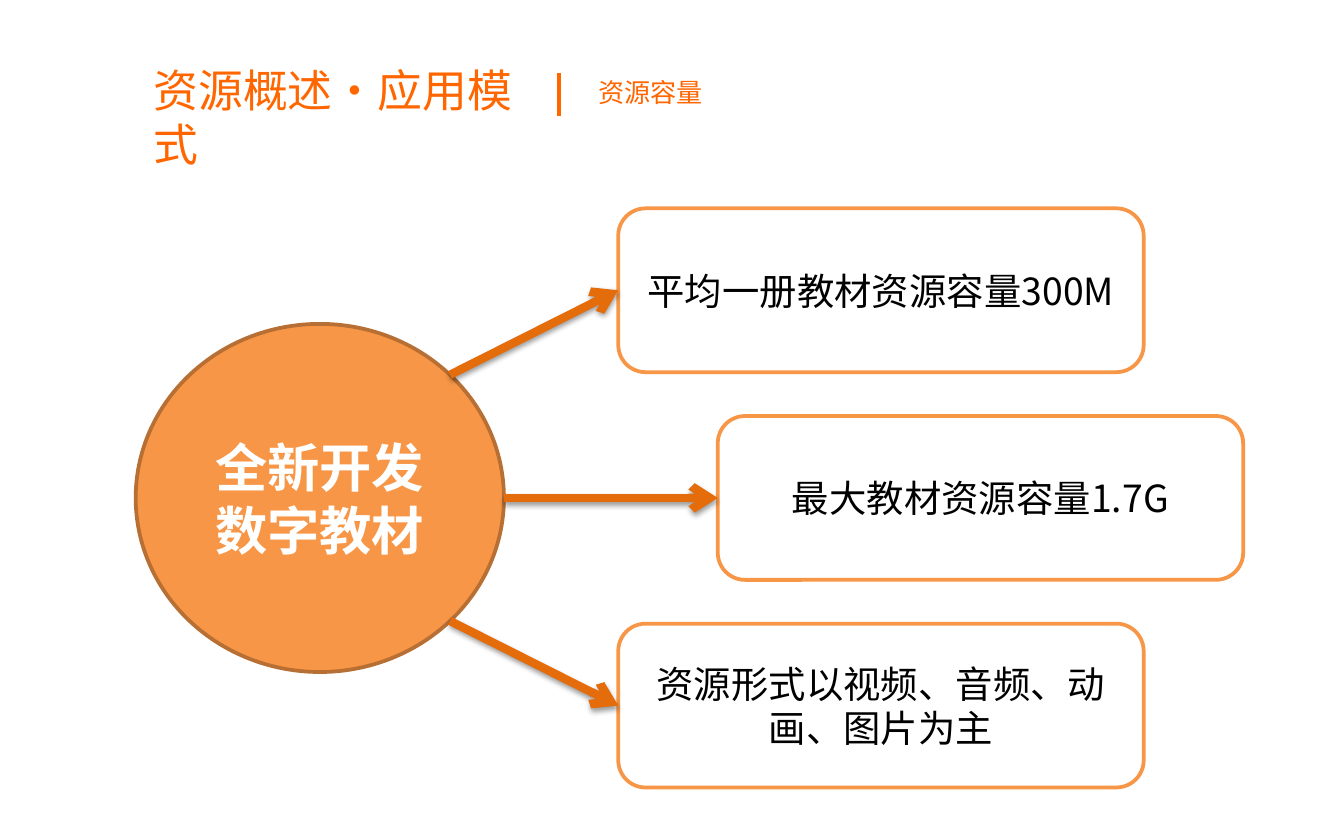
from dataclasses import dataclass
from math import cos, radians, sin

from lxml.etree import SubElement
from pptx import Presentation
from pptx.dml.color import RGBColor
from pptx.enum.shapes import MSO_CONNECTOR, MSO_SHAPE
from pptx.enum.text import MSO_ANCHOR, MSO_AUTO_SIZE, PP_ALIGN
from pptx.oxml import parse_xml
from pptx.oxml.ns import nsdecls, qn
from pptx.util import Pt

FONT = "Noto Sans CJK SC"
ACCENT, ORANGE, RIM, ARROW = "FF6600", "F79646", "B76F34", "E46C0A"
WHITE, BLACK = "FFFFFF", "000000"

# Circle and card geometry, in points
CENTER_X, CENTER_Y = 171.35, 266.75
RADIUS_X, RADIUS_Y = 98.65, 93.25
CARD_W, CARD_H, CARD_STEP = 281.5, 87.8, 111.25


@dataclass
class Card:
    text: str
    left: float
    row: int      # rows from the circle's centre line
    angle: float  # where its arrow leaves the circle, in degrees


CARDS = [
    Card("平均一册教材资源容量300M", 331.2, -1, -45),
    Card("最大教材资源容量1.7G", 384.5, 0, 0),
    Card("资源形式以视频、音频、动画、图片为主", 331.2, 1, 45),
]


def color(hex_value: str) -> RGBColor:
    return RGBColor.from_string(hex_value)


def write(shape, text: str, size: float, ink: str, bold=False,
          align=PP_ALIGN.LEFT, anchor=MSO_ANCHOR.TOP, wrap=True) -> None:
    frame = shape.text_frame
    frame.text = text
    frame.word_wrap = wrap
    frame.auto_size = MSO_AUTO_SIZE.NONE
    frame.vertical_anchor = anchor
    for paragraph in frame.paragraphs:
        paragraph.alignment = align
        for run in paragraph.runs:
            font = run.font
            font.name, font.size, font.bold = FONT, Pt(size), bold
            font.color.rgb = color(ink)
            SubElement(font._element, qn("a:ea"), typeface=FONT)


def add_node(slide, kind, left: float, top: float, width: float, height: float,
             fill: str, line: str):
    node = slide.shapes.add_shape(kind, Pt(left), Pt(top), Pt(width), Pt(height))
    node.shadow.inherit = False
    node.fill.solid()
    node.fill.fore_color.rgb = color(fill)
    node.line.color.rgb = color(line)
    node.line.width = Pt(2)
    return node


def add_line(slide, x1: float, y1: float, x2: float, y2: float,
             ink: str, width: float):
    line = slide.shapes.add_connector(
        MSO_CONNECTOR.STRAIGHT, Pt(x1), Pt(y1), Pt(x2), Pt(y2))
    line.line.color.rgb = color(ink)
    line.line.width = Pt(width)
    SubElement(line._element.spPr, qn("a:effectLst"))
    return line


def add_arrow(slide, card: Card, target) -> None:
    angle = radians(card.angle)
    arrow = add_line(slide, CENTER_X + RADIUS_X * cos(angle),
                     CENTER_Y + RADIUS_Y * sin(angle),
                     card.left, CENTER_Y + card.row * CARD_STEP, ARROW, 4.5)
    arrow.end_connect(target, 1)
    SubElement(arrow.line._get_or_add_ln(), qn("a:tailEnd"), type="arrow")
    arrow._element.spPr.find(qn("a:effectLst")).append(parse_xml(
        f'<a:outerShdw {nsdecls("a")} blurRad="{Pt(3.1)}" dist="{Pt(1.6)}" '
        'dir="5400000" rotWithShape="0"><a:srgbClr val="000000">'
        '<a:alpha val="38000"/></a:srgbClr></a:outerShdw>'))


def main() -> None:
    deck = Presentation()
    deck.slide_width, deck.slide_height = Pt(720), Pt(450)
    slide = deck.slides.add_slide(deck.slide_layouts[5])

    # Heading, divider and subheading
    heading = slide.shapes.title
    heading.left, heading.top = Pt(75), Pt(30.2)
    heading.width, heading.height = Pt(214.5), Pt(36.4)
    write(heading, "资源概述·应用模式", 24, ACCENT)
    subheading = slide.shapes.add_textbox(Pt(313.4), Pt(37.6), Pt(71.3), Pt(24.2))
    write(subheading, "资源容量", 14, ACCENT, wrap=False)
    add_line(slide, 299.3, 39, 299.3, 62, ACCENT, 2)

    # Cards
    card_nodes = []
    for card in CARDS:
        top = CENTER_Y + card.row * CARD_STEP - CARD_H / 2
        node = add_node(slide, MSO_SHAPE.ROUNDED_RECTANGLE, card.left, top,
                        CARD_W, CARD_H, WHITE, ORANGE)
        write(node, card.text, 20, BLACK, align=PP_ALIGN.CENTER,
              anchor=MSO_ANCHOR.MIDDLE)
        card_nodes.append(node)

    # Central circle
    circle = add_node(slide, MSO_SHAPE.OVAL, CENTER_X - RADIUS_X,
                      CENTER_Y - RADIUS_Y, 2 * RADIUS_X, 2 * RADIUS_Y,
                      ORANGE, RIM)
    write(circle, "全新开发\n数字教材", 28, WHITE, bold=True,
          align=PP_ALIGN.CENTER, anchor=MSO_ANCHOR.MIDDLE)

    # Arrows from the circle to the cards
    for card, node in zip(CARDS, card_nodes):
        add_arrow(slide, card, node)

    deck.save("out.pptx")


if __name__ == "__main__":
    main()
